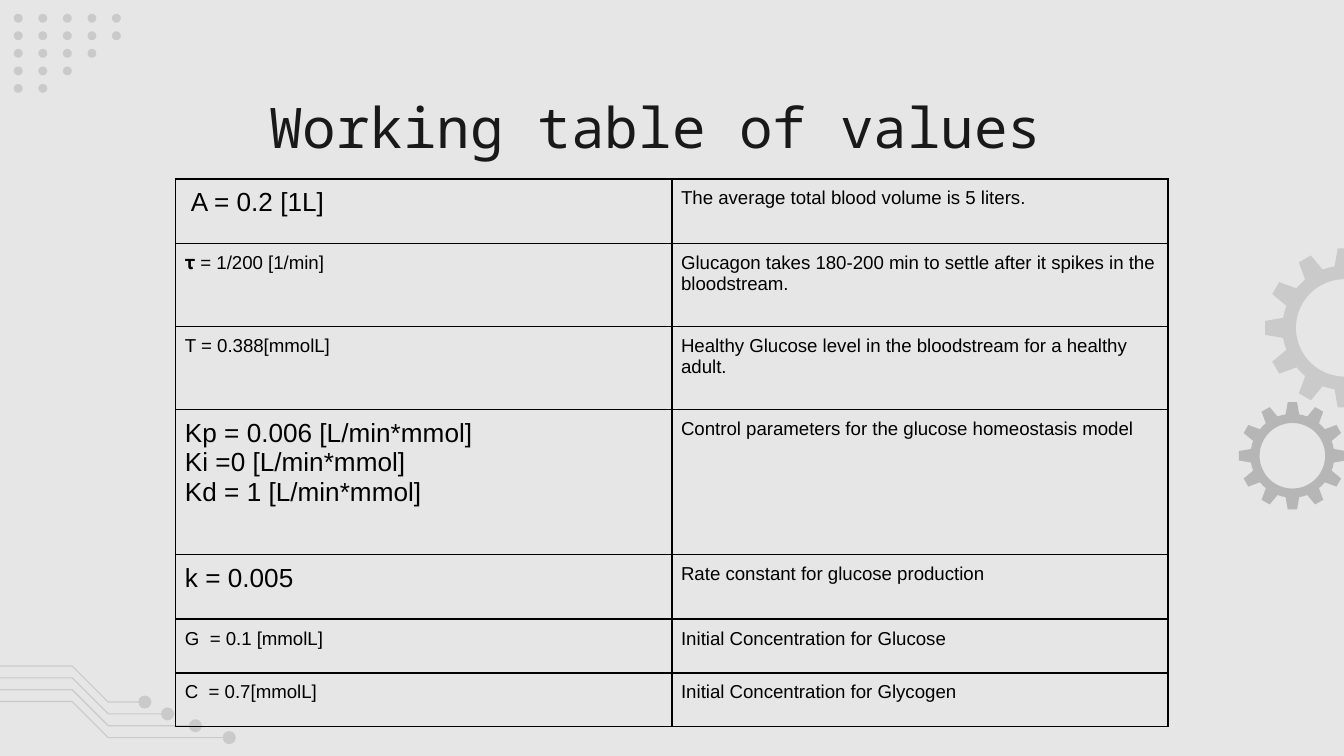
import math

from lxml import etree
from pptx import Presentation
from pptx.dml.color import RGBColor
from pptx.enum import shapes, text
from pptx.oxml import ns
from pptx.util import Pt

COLORS = {
    "background": "E6E6E6",
    "decoration": "CACACA",
    "small_gear": "B6B6B6",
    "title": "191919",
    "table": "000000",
}

# Row height, parameter text, parameter size, description
ROWS = [
    (34.6, " A = 0.2 [1L]", 14, "The average total blood volume is 5 liters."),
    (44.5, "𝛕 = 1/200 [1/min]", 10,
     "Glucagon takes 180-200 min to settle after it spikes in the bloodstream."),
    (44.5, "T = 0.388[mmolL]", 10,
     "Healthy Glucose level in the bloodstream for a healthy adult."),
    (77.7, "Kp = 0.006 [L/min*mmol]\nKi =0 [L/min*mmol]\nKd = 1 [L/min*mmol]", 14,
     "Control parameters for the glucose homeostasis model"),
    (34.6, "k = 0.005", 14, "Rate constant for glucose production"),
    (28.8, "G  = 0.1 [mmolL]", 10, "Initial Concentration for Glucose"),
    (28.8, "C  = 0.7[mmolL]", 10, "Initial Concentration for Glycogen"),
]
# First column and number of dots, for each strip, by row of the grid
DOT_STRIPS = [[(0, 4), (4, 1)], [(0, 4), (4, 1)], [(0, 4)], [(0, 3)], [(0, 2)]]
TRACE_ENDS = [(-27, 77.6), (-20, 89.8), (-14, 104.7), (-9, 122.8)]


def color(name):
    return RGBColor.from_string(COLORS[name])


def paint(shape, name):
    shape.shadow.inherit = False
    shape.fill.solid()
    shape.fill.fore_color.rgb = color(name)
    shape.line.fill.background()


def circle(x, y, radius, step):
    """Return points round a circle, one every step degrees."""
    turns = [math.radians(angle) for angle in range(0, 360, step)]
    return [(Pt(x + radius * math.cos(turn)), Pt(y - radius * math.sin(turn)))
            for turn in turns]


def add_outlines(slide, outlines, name):
    """Draw closed outlines as one filled shape."""
    builder = slide.shapes.build_freeform(*outlines[0][0])
    for index, outline in enumerate(outlines):
        if index:
            builder.move_to(*outline[0])
        builder.add_line_segments(outline[1:])
    paint(builder.convert_to_shape(), name)


def add_node(slide, x, y, radius):
    node = slide.shapes.add_shape(
        shapes.MSO_SHAPE.OVAL, Pt(x - radius), Pt(y - radius), Pt(2 * radius), Pt(2 * radius))
    paint(node, "decoration")


def add_dot_grid(slide):
    for row, strips in enumerate(DOT_STRIPS):
        for first, count in strips:
            dots = [circle(9.8 + 13.15 * column, 9.8 + 9.4 * row, 2.35, 15)
                    for column in range(first, first + count)]
            add_outlines(slide, dots, "decoration")


def add_circuit(slide):
    """Draw parallel bent traces, each ending in a round node."""
    for index, (start, end) in enumerate(TRACE_ENDS):
        top = 356.8 + 6.35 * index
        bottom = top + 19.3
        points = [(Pt(x), Pt(y)) for x, y in
                  [(start, top), (38.7, top), (58, bottom), (end, bottom)]]
        builder = slide.shapes.build_freeform(*points[0])
        builder.add_line_segments(points[1:], close=False)
        trace = builder.convert_to_shape()
        trace.shadow.inherit = False
        trace.fill.background()
        trace.line.color.rgb = color("decoration")
        trace.line.width = Pt(0.6)
        add_node(slide, end, bottom, 3.5)


def add_gear(slide, x, y, radius, name):
    """Draw a twelve-tooth ring; each tooth point is an angle and a share of the radius."""
    tooth = [(-9.3, 0.78), (-5, 1), (5, 1), (9.3, 0.78), (15, 0.78)]
    rim = []
    for step in range(0, 360, 30):
        for angle, share in tooth:
            turn = math.radians(step + angle)
            rim.append((Pt(x + radius * share * math.cos(turn)),
                        Pt(y + radius * share * math.sin(turn))))
    add_outlines(slide, [rim, circle(x, y, radius * 0.61, 5)], name)


def format_title(title):
    title.left, title.top, title.width, title.height = Pt(56.6), Pt(42.5), Pt(607), Pt(45.5)
    frame = title.text_frame
    frame.text = "Working table of values "
    frame.auto_size = text.MSO_AUTO_SIZE.NONE
    frame.vertical_anchor = text.MSO_ANCHOR.TOP
    frame.margin_left = frame.margin_right = frame.margin_top = frame.margin_bottom = Pt(7.2)
    paragraph = frame.paragraphs[0]
    paragraph.alignment = text.PP_ALIGN.CENTER
    font = paragraph.runs[0].font
    font.name, font.size, font.color.rgb = "Noto Sans Mono", Pt(30), color("title")


def add_borders(cell):
    properties = cell._tc.get_or_add_tcPr()
    for index, side in enumerate(("lnL", "lnR", "lnT", "lnB")):
        line = etree.Element(ns.qn(f"a:{side}"), w=str(Pt(1)))
        fill = etree.SubElement(line, ns.qn("a:solidFill"))
        etree.SubElement(fill, ns.qn("a:srgbClr"), val=COLORS["table"])
        properties.insert(index, line)


def fill_cell(cell, content, size):
    cell.fill.background()
    cell.margin_left = cell.margin_right = cell.margin_top = cell.margin_bottom = Pt(5)
    cell.text_frame.text = content
    paragraphs = cell.text_frame.paragraphs
    for paragraph in paragraphs:
        if len(paragraphs) > 1:
            paragraph.alignment = text.PP_ALIGN.JUSTIFY
        for run in paragraph.runs:
            run.font.name, run.font.size = "Arial", Pt(size)
            run.font.color.rgb = color("table")
    add_borders(cell)


def add_values_table(slide):
    height = sum(row[0] for row in ROWS)
    table = slide.shapes.add_table(
        len(ROWS), 2, Pt(94.1), Pt(95.8), Pt(531.6), Pt(height)).table
    table.first_row = table.horz_banding = False
    for index, (row_height, parameter, size, description) in enumerate(ROWS):
        table.rows[index].height = Pt(row_height)
        fill_cell(table.cell(index, 0), parameter, size)
        fill_cell(table.cell(index, 1), description, 10)


def main():
    presentation = Presentation()
    presentation.slide_width, presentation.slide_height = Pt(720), Pt(405)
    slide = presentation.slides.add_slide(presentation.slide_layouts[5])
    slide.background.fill.solid()
    slide.background.fill.fore_color.rgb = color("background")
    add_dot_grid(slide)
    add_circuit(slide)
    add_gear(slide, 720.4, 175.7, 42.8, "decoration")
    add_gear(slide, 692.4, 244.2, 28.8, "small_gear")
    format_title(slide.shapes.title)
    add_values_table(slide)
    presentation.save("out.pptx")


if __name__ == "__main__":
    main()
